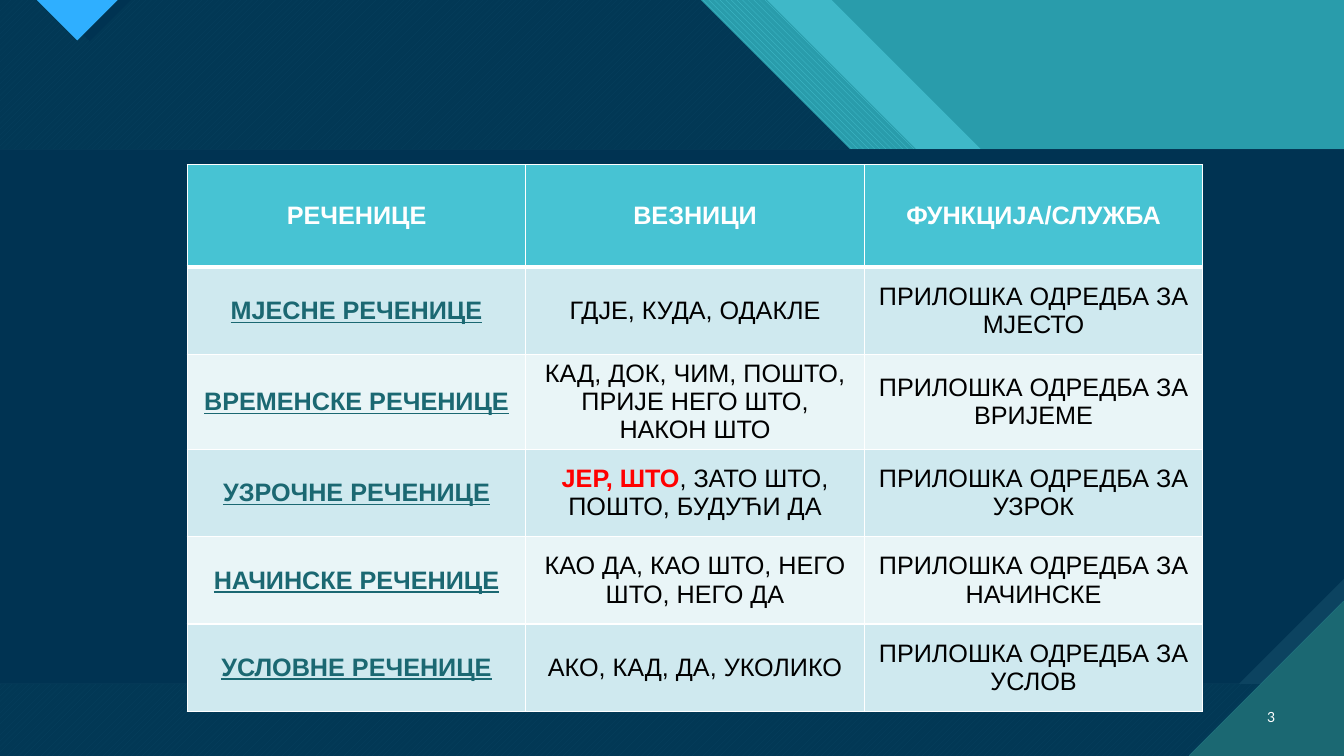
from dataclasses import dataclass
from typing import Optional

from lxml.etree import SubElement
from pptx import Presentation
from pptx.dml.color import RGBColor
from pptx.enum.dml import MSO_PATTERN as Pattern
from pptx.enum.text import MSO_ANCHOR as Anchor, PP_ALIGN as Align
from pptx.oxml.ns import qn
from pptx.util import Emu, Inches, Pt

COLUMNS, ROWS = 160, 90
UNIT = Inches(1) / 12

WHITE = RGBColor(0xFF, 0xFF, 0xFF)
BLACK = RGBColor(0x00, 0x00, 0x00)
RED = RGBColor(0xFF, 0x00, 0x00)
AQUA = RGBColor(0x47, 0xC3, 0xD3)
TEAL = RGBColor(0x29, 0x9C, 0xAB)
PINE = RGBColor(0x1B, 0x68, 0x72)
NAVY = RGBColor(0x00, 0x33, 0x52)
STEEL = RGBColor(0x0C, 0x43, 0x60)
SKY = RGBColor(0x2F, 0xAF, 0xFF)
ROW_FILLS = (RGBColor(0xCF, 0xE9, 0xEF), RGBColor(0xE9, 0xF5, 0xF7))

Points = list[tuple[float, float]]

BAND_DEPTH = 35.7
PANEL_TOP, PANEL_BOTTOM, PANEL_SNIP = 17.8, 81.4, 12.5
TABLE_LEFT, TABLE_TOP = 22.3, 19.6
TABLE_COLUMN, HEADER_ROW, BODY_ROW = 40.3, 12.2, 10.4

BASE = {"name": "Arial", "size": Pt(18), "bold": False, "underline": False}
HEADER = BASE | {"bold": True}
CLAUSE = HEADER | {"underline": True}
NUMBER = BASE | {"name": "Lato", "size": Pt(10)}


@dataclass
class Area:
    points: Points
    color: RGBColor
    pattern: Optional[Pattern] = None
    back: RGBColor = PINE
    opacity: int = 100


@dataclass
class Run:
    text: str
    color: RGBColor = BLACK
    format: Optional[dict] = None


def grid(cells: float) -> Emu:
    return Emu(round(cells * UNIT))


def band(top: float, ledge: float) -> Points:
    return [(0, 0), (top, 0), (top + BAND_DEPTH, BAND_DEPTH), (ledge, BAND_DEPTH),
            (COLUMNS, BAND_DEPTH + COLUMNS - ledge), (COLUMNS, ROWS), (0, ROWS)]


def panel(snip: float) -> Points:
    return [(0, PANEL_TOP), (COLUMNS, PANEL_TOP), (COLUMNS, PANEL_BOTTOM - snip),
            (COLUMNS - snip, PANEL_BOTTOM), (0, PANEL_BOTTOM)]


def notch(left: float, depth: float) -> Points:
    return [(left, 0), (left + depth, depth), (left + 2 * depth, 0)]


AREAS = [
    Area([(0, 0), (COLUMNS, 0), (COLUMNS, ROWS), (0, ROWS)], TEAL),
    Area(band(99, 148.1), AQUA, opacity=74),
    Area(band(91.3, 142.1), AQUA, Pattern.WIDE_DOWNWARD_DIAGONAL, TEAL),
    Area(band(83.4, 134.2), AQUA, Pattern.WIDE_UPWARD_DIAGONAL),
    Area(band(83.4, 134.2), NAVY, opacity=90),
    Area(notch(5.8, 4.9), NAVY),
    Area(notch(4.4, 4.8), SKY, Pattern.DARK_HORIZONTAL),
    Area(panel(0), STEEL, Pattern.DARK_VERTICAL),
    Area(panel(PANEL_SNIP), NAVY),
    Area([(141.5, ROWS), (COLUMNS, ROWS), (COLUMNS, 71.5)], PINE,
         Pattern.DARK_HORIZONTAL, AQUA),
]

HEADINGS = ("РЕЧЕНИЦЕ", "ВЕЗНИЦИ", "ФУНКЦИЈА/СЛУЖБА")
CLAUSES = [
    ("МЈЕСНЕ", [Run("ГДЈЕ, КУДА, ОДАКЛЕ")], "МЈЕСТО"),
    ("ВРЕМЕНСКЕ", [Run("КАД, ДОК, ЧИМ, ПОШТО, ПРИЈЕ НЕГО ШТО, НАКОН ШТО")], "ВРИЈЕМЕ"),
    ("УЗРОЧНЕ", [Run("ЈЕР, ШТО", RED, HEADER),
                 Run(", ЗАТО ШТО, ПОШТО, БУДУЋИ ДА")], "УЗРОК"),
    ("НАЧИНСКЕ", [Run("КАО ДА, КАО ШТО, НЕГО ШТО, НЕГО ДА")], "НАЧИНСКЕ"),
    ("УСЛОВНЕ", [Run("АКО, КАД, ДА, УКОЛИКО")], "УСЛОВ"),
]


def draw_area(slide, area: Area) -> None:
    corners = [(grid(x), grid(y)) for x, y in area.points]
    builder = slide.shapes.build_freeform(*corners[0])
    builder.add_line_segments(corners[1:])
    shape = builder.convert_to_shape()
    shape.shadow.inherit = False
    shape.line.fill.background()
    if area.pattern is not None:
        shape.fill.patterned()
        shape.fill.pattern = area.pattern
        shape.fill.back_color.rgb = area.back
    else:
        shape.fill.solid()
    shape.fill.fore_color.rgb = area.color
    if area.opacity < 100:
        color = shape.element.spPr.find(qn("a:solidFill")).find(qn("a:srgbClr"))
        SubElement(color, qn("a:alpha"), val=str(area.opacity * 1000))


def write_runs(text_frame, runs: list[Run], alignment: Align) -> None:
    paragraph = text_frame.paragraphs[0]
    paragraph.alignment = alignment
    for part in runs:
        run = paragraph.add_run()
        run.text = part.text
        for name, value in (part.format or BASE).items():
            setattr(run.font, name, value)
        run.font.color.rgb = part.color


def draw_borders(cell, widths: dict[str, int]) -> None:
    properties = cell._tc.get_or_add_tcPr()
    for side, width in widths.items():
        line = SubElement(properties, qn(f"a:ln{side}"), w=str(Pt(width)))
        fill = SubElement(line, qn("a:solidFill"))
        SubElement(fill, qn("a:srgbClr"), val=str(WHITE))


def draw_table(slide) -> None:
    rows = [[[Run(heading, WHITE, HEADER)] for heading in HEADINGS]]
    for clause, conjunctions, purpose in CLAUSES:
        rows.append([[Run(f"{clause} РЕЧЕНИЦЕ", PINE, CLAUSE)], conjunctions,
                     [Run(f"ПРИЛОШКА ОДРЕДБА ЗА {purpose}")]])
    table = slide.shapes.add_table(
        len(rows), len(HEADINGS), grid(TABLE_LEFT), grid(TABLE_TOP),
        grid(TABLE_COLUMN * len(HEADINGS)),
        grid(HEADER_ROW + BODY_ROW * len(CLAUSES))).table
    for column in table.columns:
        column.width = grid(TABLE_COLUMN)
    for row_index, row in enumerate(rows):
        table.rows[row_index].height = grid(BODY_ROW if row_index else HEADER_ROW)
        widths = {"L": 1, "R": 1, "T": 3 if row_index == 1 else 1,
                  "B": 1 if row_index else 3}
        for column_index, runs in enumerate(row):
            cell = table.cell(row_index, column_index)
            cell.vertical_anchor = Anchor.MIDDLE
            draw_borders(cell, widths)
            cell.fill.solid()
            cell.fill.fore_color.rgb = ROW_FILLS[(row_index - 1) % 2] if row_index else AQUA
            write_runs(cell.text_frame, runs, Align.CENTER)


def draw_number(slide) -> None:
    box = slide.shapes.add_textbox(grid(147.7), grid(82.9), grid(5.3), grid(4.8))
    box.text_frame.word_wrap = True
    box.text_frame.vertical_anchor = Anchor.MIDDLE
    write_runs(box.text_frame, [Run("3", WHITE, NUMBER)], Align.RIGHT)


def main() -> None:
    presentation = Presentation()
    presentation.slide_width = grid(COLUMNS)
    presentation.slide_height = grid(ROWS)
    slide = presentation.slides.add_slide(presentation.slide_layouts[6])
    slide.background.fill.solid()
    slide.background.fill.fore_color.rgb = AQUA
    for area in AREAS:
        draw_area(slide, area)
    draw_table(slide)
    draw_number(slide)
    presentation.save("out.pptx")


if __name__ == "__main__":
    main()
